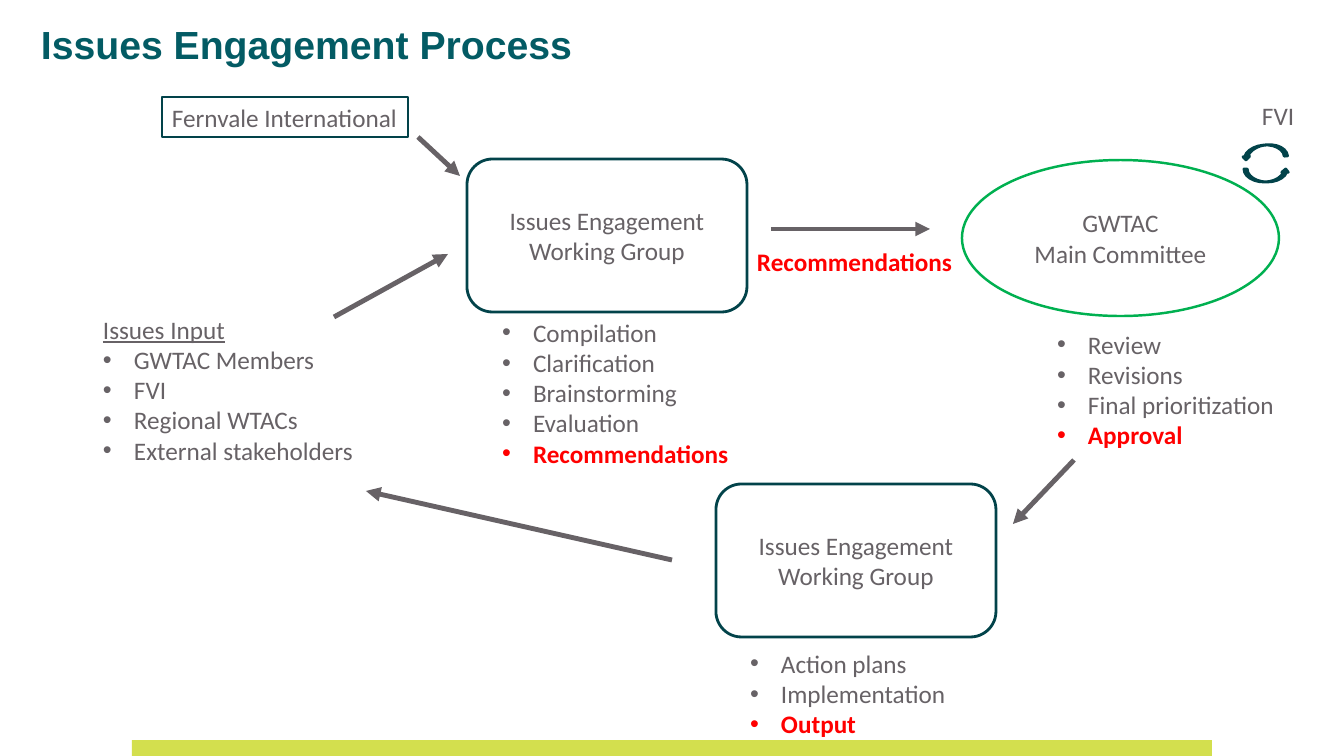
from dataclasses import dataclass

from lxml import etree
from pptx import Presentation
from pptx import util as u
from pptx.dml.color import RGBColor
from pptx.enum import shapes, text
from pptx.oxml.ns import qn

SCALE = u.Inches(1) / 100.8
GREY, RED, DARK, TEAL = "676266", "FF0000", "02434A", "035B64"
GREEN, LIME = "00B050", "D3DF4E"
BULLET_INDENT = 31
KIND = shapes.MSO_SHAPE
LEFT, CENTER = text.PP_ALIGN.LEFT, text.PP_ALIGN.CENTER
TOP, MIDDLE = text.MSO_ANCHOR.TOP, text.MSO_ANCHOR.MIDDLE


@dataclass
class Node:
    kind: int
    area: tuple[int, int, int, int]
    lines: tuple[str, ...] = ()
    fill: str | None = None
    outline: str | None = DARK
    width: float = 2
    align: int = CENTER
    rotation: float = 0


@dataclass
class Listing:
    area: tuple[int, int, int, int]
    items: tuple[str, ...]
    heading: str = ""
    key_item: str = ""


@dataclass
class Label:
    area: tuple[int, int, int, int]
    caption: str
    color: str = GREY
    bold: bool = False


@dataclass
class Arrow:
    start: tuple[int, int]
    end: tuple[int, int]


GROUP_LINES = ("Issues Engagement", "Working Group")
NODES = [
    Node(KIND.RECTANGLE, (132, 740, 1080, 16), fill=LIME, outline=None),
    Node(KIND.ROUNDED_RECTANGLE, (467, 159, 280, 153), GROUP_LINES),
    Node(KIND.ROUNDED_RECTANGLE, (716, 484, 280, 153), GROUP_LINES),
    Node(KIND.OVAL, (962, 160, 317, 156), ("GWTAC", "Main Committee"),
         outline=GREEN, width=1.75),
    Node(KIND.RECTANGLE, (162, 97, 246, 40), ("Fernvale International",), align=LEFT),
    Node(KIND.CURVED_UP_ARROW, (1244, 169, 45, 13), fill=TEAL),
    Node(KIND.CURVED_UP_ARROW, (1242, 145, 45, 13), fill=TEAL, rotation=174.5),
]
LISTINGS = [
    Listing((93, 309, 273, 163),
            ("GWTAC Members", "FVI", "Regional WTACs", "External stakeholders"),
            heading="Issues Input"),
    Listing((492, 312, 249, 163),
            ("Compilation", "Clarification", "Brainstorming", "Evaluation", "Recommendations"),
            key_item="Recommendations"),
    Listing((1047, 324, 249, 132),
            ("Review", "Revisions", "Final prioritization", "Approval"), key_item="Approval"),
    Listing((740, 643, 222, 102),
            ("Action plans", "Implementation", "Output"), key_item="Output"),
]
LABELS = [
    Label((747, 241, 217, 40), "Recommendations", RED, True),
    Label((1252, 95, 51, 40), "FVI"),
]
ARROWS = [
    Arrow((418, 137), (460, 176)),
    Arrow((334, 317), (448, 254)),
    Arrow((771, 229), (930, 229)),
    Arrow((1074, 460), (1013, 524)),
    Arrow((672, 560), (366, 491)),
]


def px(length: int) -> int:
    return round(length * SCALE)


def rgb(value: str) -> RGBColor:
    return RGBColor.from_string(value)


def apply(target, values: dict) -> None:
    for name, value in values.items():
        setattr(target, name, value)


def place(box, area: tuple[int, int, int, int]) -> None:
    apply(box, dict(zip(("left", "top", "width", "height"), map(px, area))))


def set_frame(frame, anchor: int = TOP) -> None:
    apply(frame, {"word_wrap": True, "auto_size": text.MSO_AUTO_SIZE.NONE,
                  "vertical_anchor": anchor, "margin_left": px(10), "margin_right": 0,
                  "margin_top": px(5), "margin_bottom": px(5)})


def write(frame, index: int, line: str, align: int = LEFT, color: str = GREY,
          bold: bool = False, size: int = 18, font: str = "Calibri", underline: bool = False):
    para = frame.paragraphs[0] if index == 0 else frame.add_paragraph()
    apply(para, {"alignment": align, "space_before": u.Pt(0)})
    span = para.add_run()
    span.text = line
    apply(span.font, {"name": font, "size": u.Pt(size), "bold": bold, "underline": underline})
    span.font.color.rgb = rgb(color)
    return para


def set_bullet(para, mark: str | None) -> None:
    props = para._p.get_or_add_pPr()
    indent = px(BULLET_INDENT) if mark else 0
    props.set("marL", str(indent))
    props.set("indent", str(-indent))
    if mark:
        etree.SubElement(props, qn("a:buFont"), typeface="Arial")
        etree.SubElement(props, qn("a:buChar"), char=mark)
    else:
        etree.SubElement(props, qn("a:buNone"))


def draw_node(page, node: Node) -> None:
    box = page.shapes.add_shape(node.kind, *map(px, node.area))
    box.shadow.inherit = False
    box.rotation = node.rotation
    if node.fill:
        box.fill.solid()
        box.fill.fore_color.rgb = rgb(node.fill)
    else:
        box.fill.background()
    if node.outline:
        box.line.color.rgb = rgb(node.outline)
        box.line.width = u.Pt(node.width)
    else:
        box.line.fill.background()
    if node.lines:
        set_frame(box.text_frame, MIDDLE)
        box.text_frame.margin_right = px(10 if node.align == CENTER else 0)
        for index, line in enumerate(node.lines):
            write(box.text_frame, index, line, node.align)


def fill_listing(box, listing: Listing) -> None:
    place(box, listing.area)
    set_frame(box.text_frame)
    lines = ([listing.heading] if listing.heading else []) + list(listing.items)
    for index, line in enumerate(lines):
        is_heading, is_key = line == listing.heading, line == listing.key_item
        para = write(box.text_frame, index, line, color=RED if is_key else GREY,
                     bold=is_key, underline=is_heading)
        set_bullet(para, None if is_heading else "•")


def draw_label(page, label: Label) -> None:
    box = page.shapes.add_textbox(*map(px, label.area))
    set_frame(box.text_frame)
    write(box.text_frame, 0, label.caption, color=label.color, bold=label.bold)


def draw_arrow(page, arrow: Arrow) -> None:
    line = page.shapes.add_connector(shapes.MSO_CONNECTOR.STRAIGHT,
                                     *map(px, arrow.start + arrow.end))
    line.line.color.rgb = rgb(GREY)
    line.line.width = u.Pt(3.5)
    etree.SubElement(line.line._get_or_add_ln(), qn("a:tailEnd"), type="triangle")
    etree.SubElement(line._element.spPr, qn("a:effectLst"))


def main() -> None:
    deck = Presentation()
    apply(deck, {"slide_width": px(1344), "slide_height": px(756)})
    # The comparison layout holds a title and four body placeholders
    page = deck.slides.add_slide(deck.slide_layouts[4])
    title, *bodies = page.placeholders

    # Title
    place(title, (31, 15, 835, 98))
    set_frame(title.text_frame)
    write(title.text_frame, 0, "Issues Engagement Process", color=TEAL, bold=True,
          size=28, font="Arial")

    # Process steps and their lists
    for node in NODES:
        draw_node(page, node)
    for box, listing in zip(bodies, LISTINGS):
        fill_listing(box, listing)

    # Labels and flow
    for label in LABELS:
        draw_label(page, label)
    for arrow in ARROWS:
        draw_arrow(page, arrow)
    deck.save("out.pptx")


if __name__ == "__main__":
    main()
